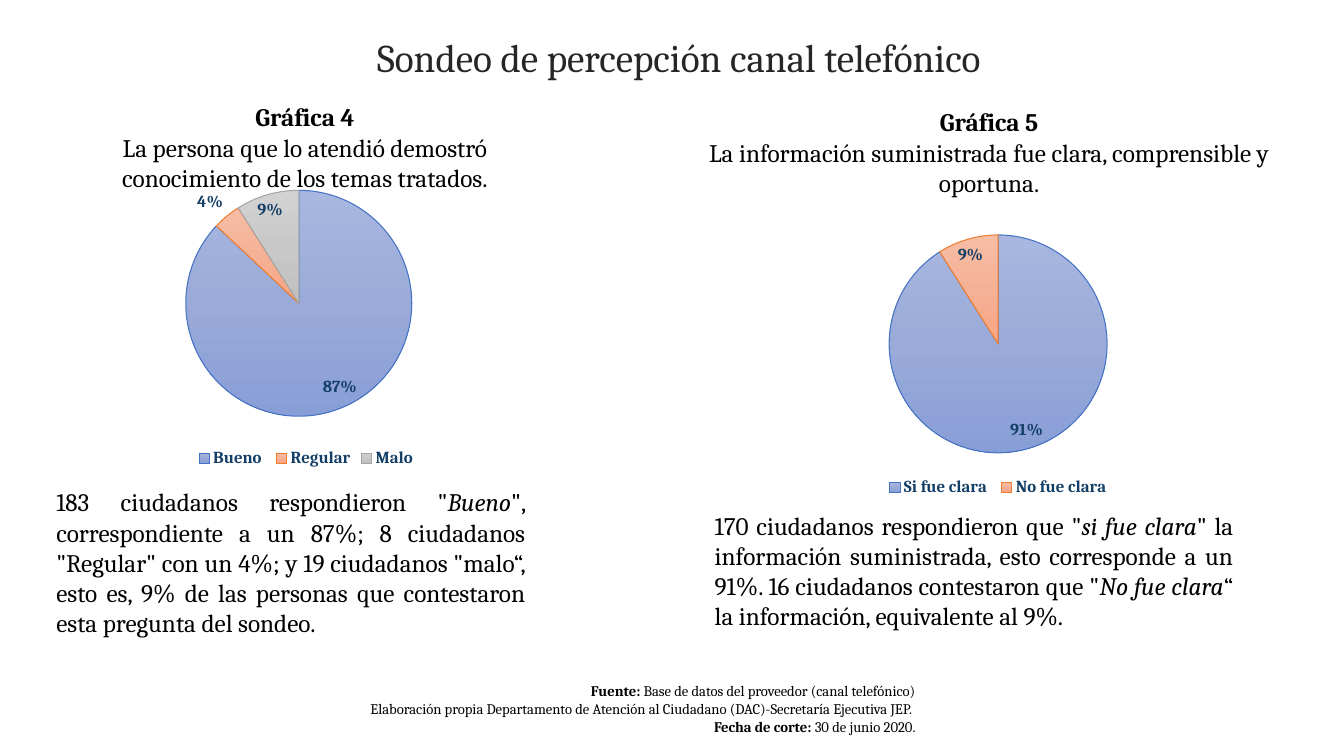
"""Build the telephone channel perception survey slide with two pie charts."""
from copy import deepcopy

from lxml import etree
from pptx import Presentation
from pptx.chart.data import CategoryChartData
from pptx.dml.color import RGBColor
from pptx.enum.chart import XL_CHART_TYPE, XL_LABEL_POSITION, XL_LEGEND_POSITION
from pptx.enum.text import MSO_AUTO_SIZE, PP_ALIGN
from pptx.oxml.ns import qn
from pptx.util import Pt

PX = 9144
FONT = "Cambria"
BLACK = RGBColor(0x00, 0x00, 0x00)
TITLE_GREY = RGBColor(0x26, 0x26, 0x26)
NAVY = RGBColor(0x13, 0x3E, 0x65)
SLICES = [
    (RGBColor(0x44, 0x72, 0xC4), [RGBColor(0xA8, 0xB7, 0xDF), RGBColor(0x9A, 0xAB, 0xD9), RGBColor(0x88, 0x9E, 0xD7)]),
    (RGBColor(0xED, 0x7D, 0x31), [RGBColor(0xF7, 0xBD, 0xA5), RGBColor(0xF5, 0xB1, 0x96), RGBColor(0xF8, 0xA5, 0x82)]),
    (RGBColor(0xA5, 0xA5, 0xA5), [RGBColor(0xD2, 0xD2, 0xD2), RGBColor(0xC8, 0xC8, 0xC8), RGBColor(0xC0, 0xC0, 0xC0)]),
]
CENTER, RIGHT, JUSTIFY = PP_ALIGN.CENTER, PP_ALIGN.RIGHT, PP_ALIGN.JUSTIFY
GROW, FIXED = MSO_AUTO_SIZE.SHAPE_TO_FIT_TEXT, MSO_AUTO_SIZE.NONE
PIE, BEST_FIT, BOTTOM = XL_CHART_TYPE.PIE, XL_LABEL_POSITION.BEST_FIT, XL_LEGEND_POSITION.BOTTOM
PLAIN, BOLD, ITALIC = {}, {"bold": True}, {"italic": True}


def set_font(font, size, color, style):
    for name, value in {"name": FONT, "size": Pt(size), **style}.items():
        setattr(font, name, value)
    font.color.rgb = color


deck = Presentation()
deck.slide_width, deck.slide_height = 1333 * PX, 750 * PX
page = deck.slides.add_slide(deck.slide_layouts[6])

texts = [
    ((275, 33, 805, 55), 28, TITLE_GREY, CENTER, 0.9, FIXED, [
        [("Sondeo de percepción canal telefónico ", PLAIN)]]),
    ((46, 96, 513, 101), 18, BLACK, CENTER, 1.0, GROW, [
        [("Gráfica 4", BOLD)],
        [("La persona que lo atendió demostró conocimiento de los temas tratados.", PLAIN)]]),
    ((682, 101, 598, 101), 18, BLACK, CENTER, 1.0, GROW, [
        [("Gráfica 5", BOLD)],
        [("La información suministrada fue clara, comprensible y oportuna.", PLAIN)]]),
    ((245, 672, 673, 63), 10.5, BLACK, RIGHT, 1.0, GROW, [
        [("Fuente:", BOLD), (" Base de datos del proveedor (canal telefónico)", PLAIN)],
        [("Elaboración propia Departamento de Atención al Ciudadano (DAC)-Secretaría Ejecutiva JEP. ", PLAIN)],
        [("Fecha de corte:", BOLD), (" 30 de junio 2020.", PLAIN)]]),
    ((46, 478, 485, 192), 18, BLACK, JUSTIFY, 1.0, GROW, [
        [('183 ciudadanos respondieron "', PLAIN), ("Bueno", ITALIC),
         ('", correspondiente a un 87%; 8 ciudadanos "Regular" con un 4%; y 19 ciudadanos "malo“, '
          "esto es, 9% de las personas que contestaron esta pregunta del sondeo.", PLAIN)]]),
    ((699, 501, 534, 131), 18, BLACK, JUSTIFY, 1.0, GROW, [
        [('170 ciudadanos respondieron que "', PLAIN), ("si fue clara", ITALIC),
         ('" la información suministrada, esto corresponde a un 91%. 16 ciudadanos contestaron que "', PLAIN),
         ("No fue clara", ITALIC), ("“ la información, equivalente al 9%.", PLAIN)]]),
]
for place, size, color, align, spacing, fit, paragraphs in texts:
    box = page.shapes.add_textbox(*(length * PX for length in place))
    frame = box.text_frame
    frame.word_wrap = True
    frame.auto_size = fit
    for index, spans in enumerate(paragraphs):
        para = frame.add_paragraph() if index else frame.paragraphs[0]
        para.alignment, para.line_spacing = align, spacing
        for words, style in spans:
            span = para.add_run()
            span.text = words
            set_font(span.font, size, color, style)

charts = [
    ((65, 167, 477, 301), {"Bueno ": 87, "Regular": 4, "Malo": 9},
     {"x": 0.25, "y": 0.05, "w": 0.47, "h": 0.79}),
    ((740, 197, 500, 300), {"Si fue clara ": 91, "No fue clara": 9}, None),
]
for place, answers, plot_area in charts:
    data = CategoryChartData()
    data.categories = list(answers)
    data.add_series("Series 1", list(answers.values()))
    chart = page.shapes.add_chart(PIE, *(length * PX for length in place), data).chart
    chart.has_title = False
    chart.has_legend = True
    chart.legend.position = BOTTOM
    chart.legend.include_in_layout = False
    plot = chart.plots[0]
    plot.vary_by_categories = True
    plot.has_data_labels = True
    labels = plot.data_labels
    for name, value in {"show_percentage": True, "show_value": False, "number_format": "0%",
                        "number_format_is_linked": False, "position": BEST_FIT}.items():
        setattr(labels, name, value)
    for font in (chart.font, chart.legend.font, labels.font):
        set_font(font, 12, NAVY, BOLD)

    series = plot.series[0]
    for index, (outline, shades) in enumerate(SLICES[:len(answers)]):
        look = series.points[index].format
        look.line.color.rgb = outline
        look.line.width = Pt(0.75)
        look.fill.gradient()
        look.fill.gradient_angle = 270
        stops = series._element.xpath(".//a:gsLst")[-1]
        stops.insert(1, deepcopy(stops[0]))
        for step, (stop, shade) in enumerate(zip(look.fill.gradient_stops, shades)):
            stop.color.rgb = shade
            stop.position = step / 2

    if plot_area:
        area = chart._chartSpace.xpath(".//c:plotArea")[0]
        for old in area.findall(qn("c:layout")):
            area.remove(old)
        layout = etree.Element(qn("c:layout"))
        manual = etree.SubElement(layout, qn("c:manualLayout"))
        settings = {"layoutTarget": "inner", "xMode": "edge", "yMode": "edge", **plot_area}
        for name, value in settings.items():
            etree.SubElement(manual, qn(f"c:{name}")).set("val", str(value))
        area.insert(0, layout)

deck.save("out.pptx")
